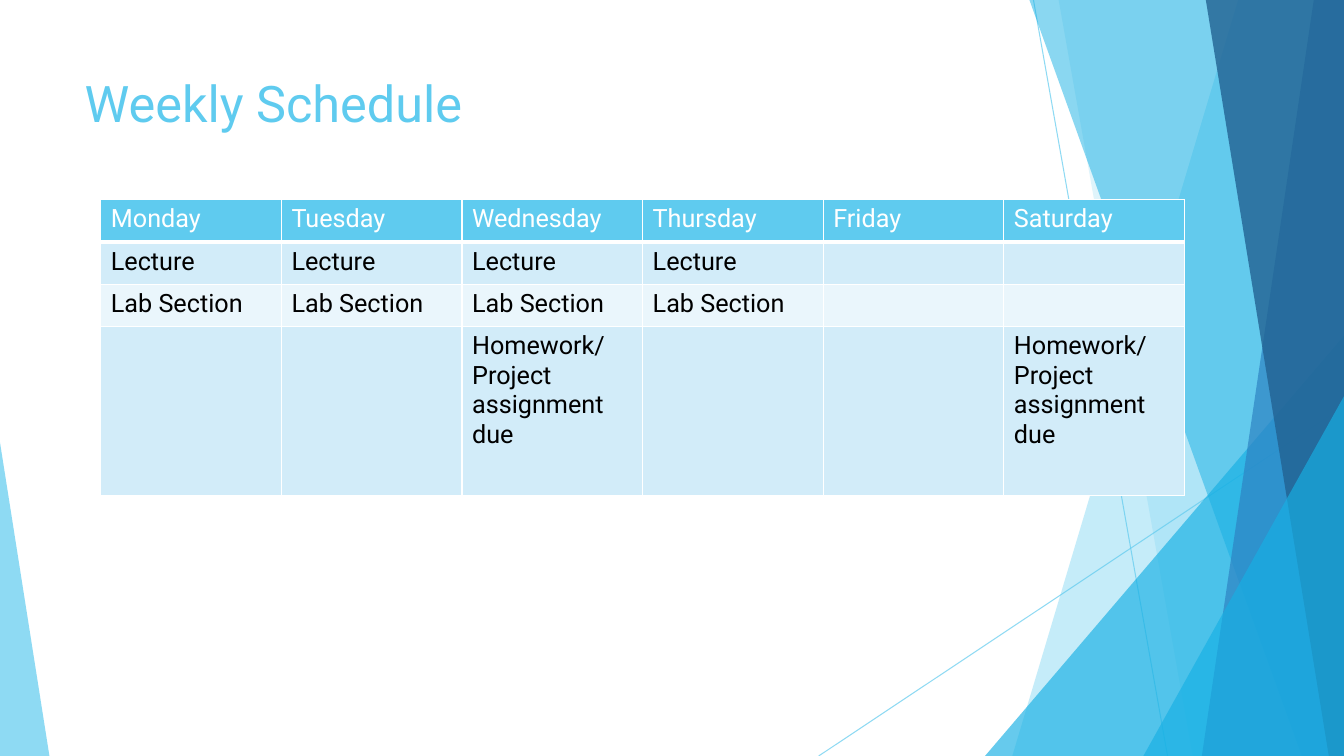
from lxml.etree import SubElement
from pptx import Presentation
from pptx.dml.color import RGBColor
from pptx.enum.shapes import MSO_CONNECTOR, MSO_SHAPE
from pptx.enum.text import MSO_ANCHOR, PP_ALIGN
from pptx.oxml.ns import qn
from pptx.util import Inches, Pt

WIDE, HIGH = 13.33, 7.5
FONT = "Roboto"
COLORS = {
    "sky": "5FCBEF", "cyan": "17B0E4", "blue": "2E83C3", "navy": "226292",
    "band": "D2ECF9", "pale": "EAF6FC", "white": "FFFFFF", "black": "000000",
}

TITLE = "Weekly Schedule"
DUE = "Homework/ Project assignment due"
WEEK = {
    "Monday": ("Lecture", "Lab Section", ""),
    "Tuesday": ("Lecture", "Lab Section", ""),
    "Wednesday": ("Lecture", "Lab Section", DUE),
    "Thursday": ("Lecture", "Lab Section", ""),
    "Friday": ("", "", ""),
    "Saturday": ("", "", DUE),
}
ROWS = [(0.42, "sky", "white"), (0.42, "band", "black"),
        (0.42, "pale", "black"), (1.68, "band", "black")]
TABLE = (1, 1.98, 10.75, 2.94)

LINES = [(10.25, 0, 11.58, HIGH), (WIDE, 4.03, 8.12, HIGH)]
PANELS = [
    ("slant", (12.28, 10.04), "sky", 36),
    ("slant", (10.5, 11.83), "sky", 20),
    ("wedge", (9.77, 3.33, 3.56, 1), "cyan", 66),
    ("slant", (10.21, 12.91), "cyan", 50),
    ("slant", (13.03, 11.92), "blue", 70),
    ("slant", (11.96, 13.18), "navy", 80),
    ("wedge", (11.34, 3.93, 1.99, 1), "cyan", 66),
    ("wedge", (0, 4.39, 0.49, 0), "sky", 70),
]


def rgb(name):
    return RGBColor.from_string(COLORS[name])


def fade(part, alpha):
    for color in part.iter(qn("a:srgbClr")):
        SubElement(color, qn("a:alpha")).set("val", str(alpha * 1000))


def style(frame, size, color):
    line = frame.paragraphs[0]
    line.alignment = PP_ALIGN.LEFT
    look = {"name": FONT, "size": Pt(size), "bold": False}
    for key, value in look.items():
        setattr(line.font, key, value)
    line.font.color.rgb = rgb(color)


def add_line(shapes, ends):
    line = shapes.add_connector(MSO_CONNECTOR.STRAIGHT, *map(Inches, ends))
    line.line.width = Pt(0.75)
    line.line.color.rgb = rgb("sky")
    props = line._element.spPr
    fade(props, 70)
    SubElement(props, qn("a:effectLst"))


def add_panel(shapes, kind, place, color, alpha):
    if kind == "slant":
        top, foot = place
        path = [(top, 0), (WIDE, 0), (WIDE, HIGH), (foot, HIGH)]
        points = [(Inches(x), Inches(y)) for x, y in path]
        draft = shapes.build_freeform(*points[0])
        draft.add_line_segments(points[1:], close=True)
        panel = draft.convert_to_shape()
    else:
        left, top, width, peak = place
        box = map(Inches, (left, top, width, HIGH - top))
        panel = shapes.add_shape(MSO_SHAPE.ISOSCELES_TRIANGLE, *box)
        panel.adjustments[0] = peak
    panel.shadow.inherit = False
    panel.fill.solid()
    panel.fill.fore_color.rgb = rgb(color)
    panel.line.fill.background()
    fade(panel._element.spPr, alpha)


def add_title(slide):
    title = slide.shapes.title
    slide.shapes._spTree.append(title._element)
    spot = {"left": 0.74, "top": 0.67, "width": 9.4, "height": 1.44}
    for key, value in spot.items():
        setattr(title, key, Inches(value))
    title.text_frame.text = TITLE
    title.text_frame.vertical_anchor = MSO_ANCHOR.TOP
    style(title.text_frame, 36, "sky")


def add_rim(cell):
    props = cell._tc.get_or_add_tcPr()
    for side, width in {"L": 1, "R": 1, "T": 1, "B": 3}.items():
        edge = SubElement(props, qn(f"a:ln{side}"), w=str(Pt(width)))
        fill = SubElement(edge, qn("a:solidFill"))
        SubElement(fill, qn("a:srgbClr"), val=COLORS["white"])


def add_week(shapes):
    box = map(Inches, TABLE)
    table = shapes.add_table(len(ROWS), len(WEEK), *box).table
    for col in table.columns:
        col.width = Inches(TABLE[2] / len(WEEK))
    for row, (height, fill, ink) in enumerate(ROWS):
        table.rows[row].height = Inches(height)
        for col, (day, tasks) in enumerate(WEEK.items()):
            cell = table.cell(row, col)
            if row == 0:
                add_rim(cell)
            cell.fill.solid()
            cell.fill.fore_color.rgb = rgb(fill)
            cell.text = (day, *tasks)[row]
            style(cell.text_frame, 18, ink)


def main():
    deck = Presentation()
    deck.slide_width, deck.slide_height = Inches(WIDE), Inches(HIGH)
    slide = deck.slides.add_slide(deck.slide_layouts[5])
    for ends in LINES:
        add_line(slide.shapes, ends)
    for panel in PANELS:
        add_panel(slide.shapes, *panel)
    add_title(slide)
    add_week(slide.shapes)
    deck.save("out.pptx")


if __name__ == "__main__":
    main()
